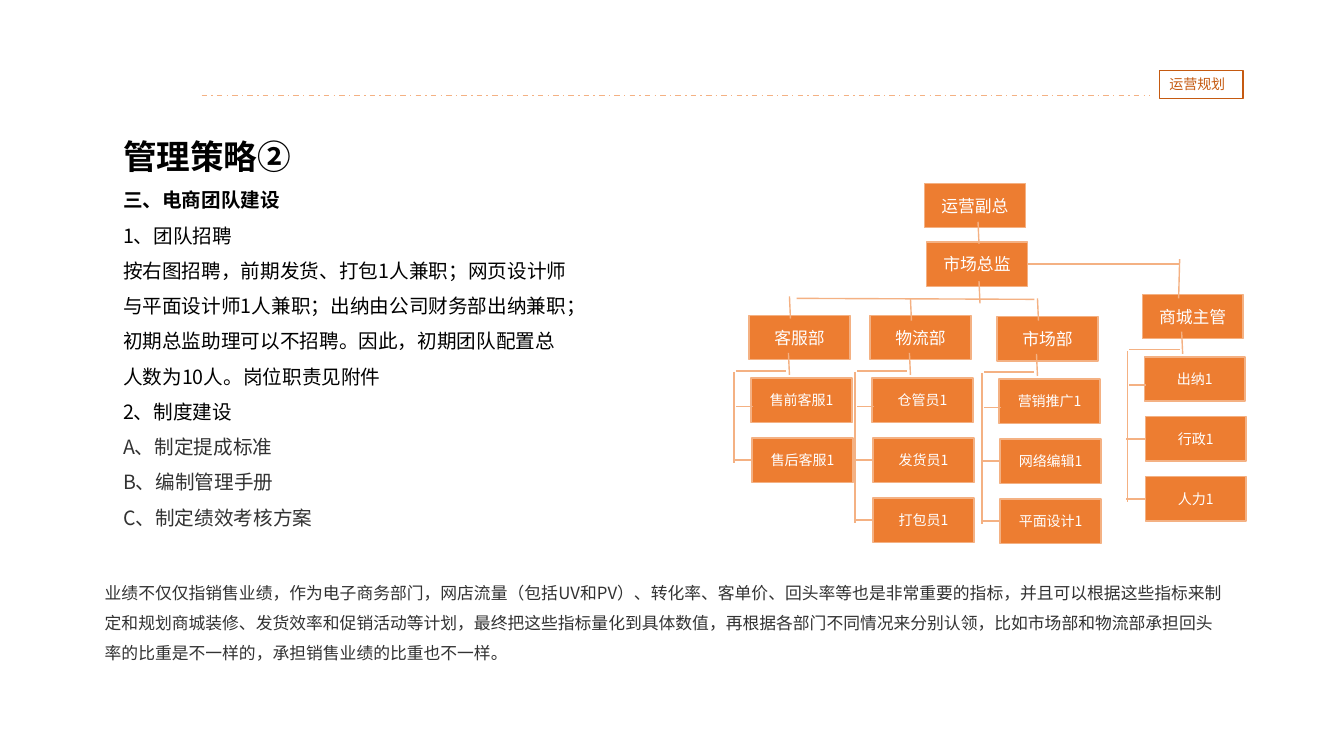
import pptx
import pptx.util
import pptx.dml.color
import pptx.enum.dml
import pptx.enum.shapes
import pptx.enum.text
from dataclasses import dataclass
from lxml import etree
from pptx.util import Inches

# Content
TAG = "运营规划"
HEADING = "管理策略②"
# text, bold, theme colour
PLAN = [
    ("三、电商团队建设", True, "black"),
    ("1、团队招聘", False, "black"),
    ("按右图招聘，前期发货、打包1人兼职；网页设计师与平面设计师1人兼职；出纳由公司财务部出纳兼职；"
     "初期总监助理可以不招聘。因此，初期团队配置总人数为10人。岗位职责见附件", False, "black"),
    ("2、制度建设", False, "black"),
    ("A、制定提成标准", False, "grey"),
    ("B、编制管理手册", False, "grey"),
    ("C、制定绩效考核方案", False, "grey"),
]
SUMMARY = (
    "业绩不仅仅指销售业绩，作为电子商务部门，网店流量（包括UV和PV）、转化率、客单价、回头率等也是非常重要的指标，"
    "并且可以根据这些指标来制定和规划商城装修、发货效率和促销活动等计划，最终把这些指标量化到具体数值，"
    "再根据各部门不同情况来分别认领，比如市场部和物流部承担回头率的比重是不一样的，承担销售业绩的比重也不一样。"
)
# name, left, top, staff
DEPARTMENTS = [
    ("物流部", 8.63, 3.13, ["仓管员1", "发货员1", "打包员1"]),
    ("客服部", 7.43, 3.13, ["售前客服1", "售后客服1"]),
    ("市场部", 9.89, 3.14, ["营销推广1", "网络编辑1", "平面设计1"]),
    ("商城主管", 11.33, 2.92, ["出纳1", "行政1", "人力1"]),
]
DIRECTORS = [("市场总监", 9.19, 2.4), ("运营副总", 9.17, 1.82)]


@dataclass(frozen=True)
class Theme:
    font: str = "Noto Sans CJK SC"
    black: str = "000000"
    grey: str = "323232"
    white: str = "FFFFFF"
    box: str = "ED7D31"
    line: str = "F4B183"
    tag: str = "C55A11"
    title_size: int = 24
    body_size: int = 14
    head_size: int = 12
    staff_size: int = 10


THEME = Theme()
BOX_W, BOX_H = 1, 0.44
STAFF_TOP, STAFF_PITCH = 0.62, 0.595
STEM_RISE = 0.22

deck = pptx.Presentation()
deck.slide_width, deck.slide_height = Inches(13.33), Inches(7.5)
slide = deck.slides.add_slide(deck.slide_layouts[1])


def rgb(colour):
    return pptx.dml.color.RGBColor.from_string(colour)


def write(paragraph, words, size, colour, bold=False, spacing=None):
    run = paragraph.add_run()
    run.text = words
    run.font.size = pptx.util.Pt(size)
    run.font.bold = bold
    run.font.name = THEME.font
    run.font.color.rgb = rgb(colour)
    east_asian = etree.SubElement(run.font._element, pptx.oxml.ns.qn("a:ea"))
    east_asian.set("typeface", THEME.font)
    paragraph.space_before = pptx.util.Pt(0)
    if spacing:
        paragraph.line_spacing = spacing


def place(holder, left, top, width, height):
    holder.left, holder.top = Inches(left), Inches(top)
    holder.width, holder.height = Inches(width), Inches(height)
    frame = holder.text_frame
    frame.word_wrap = True
    frame.auto_size = pptx.enum.text.MSO_AUTO_SIZE.NONE
    frame.vertical_anchor = pptx.enum.text.MSO_ANCHOR.TOP
    return frame


def add_box(words, left, top, size):
    box = slide.shapes.add_shape(
        pptx.enum.shapes.MSO_SHAPE.RECTANGLE,
        Inches(left), Inches(top), Inches(BOX_W), Inches(BOX_H))
    box.shadow.inherit = False
    box.fill.solid()
    box.fill.fore_color.rgb = rgb(THEME.box)
    box.line.color.rgb = rgb(THEME.line)
    box.line.width = pptx.util.Pt(1)
    box.text_frame.vertical_anchor = pptx.enum.text.MSO_ANCHOR.MIDDLE
    label = box.text_frame.paragraphs[0]
    label.alignment = pptx.enum.text.PP_ALIGN.CENTER
    write(label, words, size, THEME.white)
    return box


def add_line(x1, y1, x2, y2):
    line = slide.shapes.add_connector(
        pptx.enum.shapes.MSO_CONNECTOR.STRAIGHT,
        Inches(x1), Inches(y1), Inches(x2), Inches(y2))
    line.line.color.rgb = rgb(THEME.line)
    line.line.width = pptx.util.Pt(1)
    etree.SubElement(line._element.spPr, pptx.oxml.ns.qn("a:effectLst"))
    return line


def add_stem(x, y):
    add_line(x, y, x + 0.01, y + STEM_RISE)


def add_department(name, left, top, staff):
    add_box(name, left, top, THEME.head_size)
    spine = left - 0.15
    for i, post in enumerate(staff):
        post_top = top + STAFF_TOP + i * STAFF_PITCH
        post_box = add_box(post, left + (0.03 if i else 0.02), post_top, THEME.staff_size)
        if i:
            tick_y = post_top + BOX_H / 2
            tick = add_line(spine - 0.01, tick_y, left + 0.03, tick_y)
            tick.end_connect(post_box, 1)
        else:
            add_line(spine + 0.02, top + 0.9, left + 0.04, top + 0.9)
    add_line(spine, top + 0.56, spine, tick_y + 0.03)
    add_line(spine + 0.02, top + 0.55, left + 0.37, top + 0.55)
    add_stem(left + 0.39, top + 0.37)


# Header rule and tag
rule = add_line(2, 0.95, 11.4, 0.95)
rule.line.dash_style = pptx.enum.dml.MSO_LINE.DASH_DOT
tag = slide.shapes.add_shape(
    pptx.enum.shapes.MSO_SHAPE.RECTANGLE, 0, 0, 0, 0)
tag_frame = place(tag, 11.5, 0.7, 0.83, 0.28)
tag.shadow.inherit = False
tag.fill.background()
tag.line.color.rgb = rgb(THEME.tag)
tag.line.width = pptx.util.Pt(1)
tag_frame.paragraphs[0].alignment = pptx.enum.text.PP_ALIGN.LEFT
write(tag_frame.paragraphs[0], TAG, THEME.staff_size, THEME.tag)

# Title and plan
heading = place(slide.shapes.title, 1.12, 0.98, 4.64, 0.77).paragraphs[0]
heading.alignment = pptx.enum.text.PP_ALIGN.LEFT
write(heading, HEADING, THEME.title_size, THEME.black, True, 1.8)

plan = place(slide.placeholders[1], 1.12, 1.7, 4.64, 3.95)
for i, (words, bold, colour) in enumerate(PLAN):
    item = plan.add_paragraph() if i else plan.paragraphs[0]
    write(item, words, THEME.body_size, getattr(THEME, colour), bold, 1.5)
    layout = item._p.get_or_add_pPr()
    layout.set("marL", "0")
    layout.set("indent", "0")
    etree.SubElement(layout, pptx.oxml.ns.qn("a:buNone"))

# Organisation chart
for department in DEPARTMENTS:
    add_department(*department)
market_director, _ = [add_box(*d, THEME.head_size) for d in DIRECTORS]
add_line(7.9, 2.96, 10.26, 2.97)
for x, y in [(7.83, 2.94), (9.03, 2.96), (10.29, 2.96), (9.7, 2.2), (9.71, 2.79)]:
    add_stem(x, y)
mall_link = add_line(10.19, 2.62, 11.7, 2.62)
mall_link.begin_connect(market_director, 3)
add_line(11.7, 2.57, 11.69, 2.96)

# Summary
summary = place(slide.shapes.add_textbox(0, 0, 0, 0), 0.94, 5.63, 11.29, 1)
write(summary.paragraphs[0], SUMMARY, THEME.head_size, THEME.grey, spacing=1.5)

deck.save("out.pptx")
